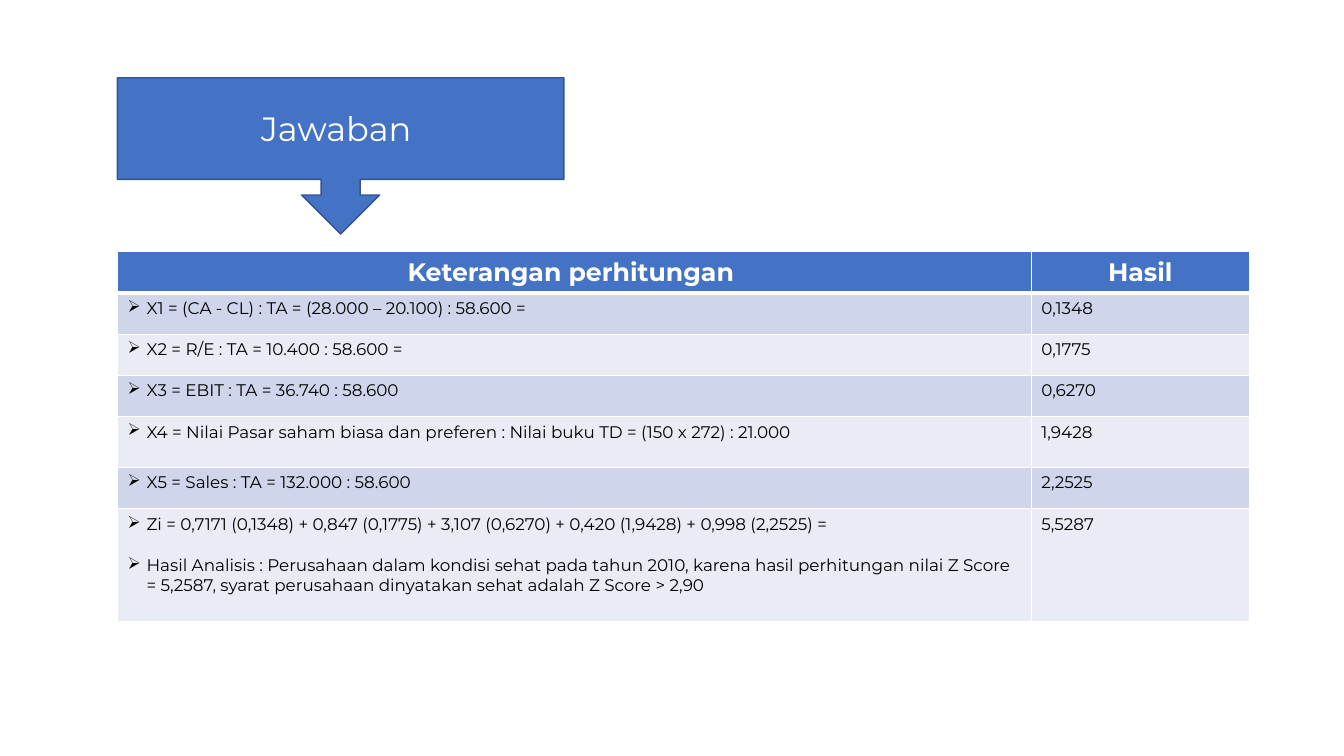
from lxml.etree import SubElement
from pptx import Presentation
from pptx.dml.color import RGBColor
from pptx.enum.shapes import MSO_SHAPE
from pptx.enum.text import MSO_ANCHOR, PP_ALIGN
from pptx.oxml import parse_xml
from pptx.oxml.ns import nsdecls, qn
from pptx.util import Cm, Pt

THEME = {
    "accent": RGBColor.from_string("4472C4"),
    "outline": RGBColor.from_string("325491"),
    "bands": [RGBColor.from_string("CFD5EA"), RGBColor.from_string("E9EBF5")],
    "border": "FFFFFF",
    "title": {"name": "Montserrat", "size": Pt(24), "bold": False},
    "heading": {"name": "Montserrat", "size": Pt(18), "bold": True},
    "body": {"name": "Montserrat", "size": Pt(12), "bold": False},
    "light": RGBColor.from_string("FFFFFF"),
    "dark": RGBColor.from_string("000000"),
}


def write(paragraph, text, style, color, align=PP_ALIGN.LEFT):
    paragraph.alignment = align
    run = paragraph.add_run()
    run.text = text
    for attribute, value in THEME[style].items():
        setattr(run.font, attribute, value)
    run.font.color.rgb = THEME[color]


def paint(cell, color, bottom_width):
    widths = {"lnL": Pt(1), "lnR": Pt(1), "lnT": Pt(1), "lnB": bottom_width}
    properties = cell._tc.get_or_add_tcPr()
    for side, width in widths.items():
        properties.append(parse_xml(
            f'<a:{side} {nsdecls("a")} w="{width}"><a:solidFill>'
            f'<a:srgbClr val="{THEME["border"]}"/></a:solidFill></a:{side}>'
        ))
    cell.fill.solid()
    cell.fill.fore_color.rgb = color


headings = ["Keterangan perhitungan ", "Hasil"]
calculations = [
    (["X1 = (CA - CL) : TA = (28.000 – 20.100) : 58.600 ="], "0,1348", 1.04),
    (["X2 = R/E : TA = 10.400 : 58.600 ="], "0,1775", 1.04),
    (["X3 = EBIT : TA = 36.740 : 58.600"], "0,6270", 1.04),
    (["X4 = Nilai Pasar saham biasa dan preferen : Nilai buku TD = (150 x 272) : 21.000"], "1,9428", 1.28),
    (["X5 = Sales : TA = 132.000 : 58.600"], "2,2525", 1.04),
    (["Zi = 0,7171 (0,1348) + 0,847 (0,1775) + 3,107 (0,6270) + 0,420 (1,9428) + 0,998 (2,2525) =",
      "Hasil Analisis : Perusahaan dalam kondisi sehat pada tahun 2010, karena hasil perhitungan nilai Z Score"
      " = 5,2587, syarat perusahaan dinyatakan sehat adalah Z Score > 2,90"], "5,5287", 2.85),
]

presentation = Presentation()
presentation.slide_width = Cm(33.87)
presentation.slide_height = Cm(19.05)
slide = presentation.slides.add_slide(presentation.slide_layouts[6])

results = slide.shapes.add_table(
    len(calculations) + 1, len(headings), Cm(2.96), Cm(6.34), Cm(28.52), Cm(9.32)
).table
for column, width in zip(results.columns, [23.03, 5.49]):
    column.width = Cm(width)
results.rows[0].height = Cm(1.04)
for cell, heading in zip(results.rows[0].cells, headings):
    write(cell.text_frame.paragraphs[0], heading, "heading", "light", PP_ALIGN.CENTER)
    paint(cell, THEME["accent"], Pt(3))

for index, (steps, value, height) in enumerate(calculations):
    row = results.rows[index + 1]
    row.height = Cm(height)
    explanation, result = row.cells
    for position, step in enumerate(steps):
        frame = explanation.text_frame
        paragraph = frame.add_paragraph() if position else frame.paragraphs[0]
        write(paragraph, step, "body", "dark")
        if position:
            paragraph.space_before = Pt(14.6)
        properties = paragraph._p.get_or_add_pPr()
        for attribute, length in {"marL": Cm(0.48), "indent": Cm(-0.48)}.items():
            properties.set(attribute, str(length))
        SubElement(properties, qn("a:buChar")).set("char", "➢")
    write(result.text_frame.paragraphs[0], value, "body", "dark")
    for cell in (explanation, result):
        paint(cell, THEME["bands"][index % 2], Pt(1))

answer = slide.shapes.add_shape(
    MSO_SHAPE.DOWN_ARROW_CALLOUT, Cm(2.96), Cm(1.96), Cm(11.25), Cm(3.94)
)
answer.shadow.inherit = False
answer.fill.solid()
answer.fill.fore_color.rgb = THEME["accent"]
answer.line.color.rgb = THEME["outline"]
answer.line.width = Pt(1)
answer.text_frame.word_wrap = True
answer.text_frame.vertical_anchor = MSO_ANCHOR.MIDDLE
write(answer.text_frame.paragraphs[0], "Jawaban ", "title", "light", PP_ALIGN.CENTER)

presentation.save("out.pptx")
